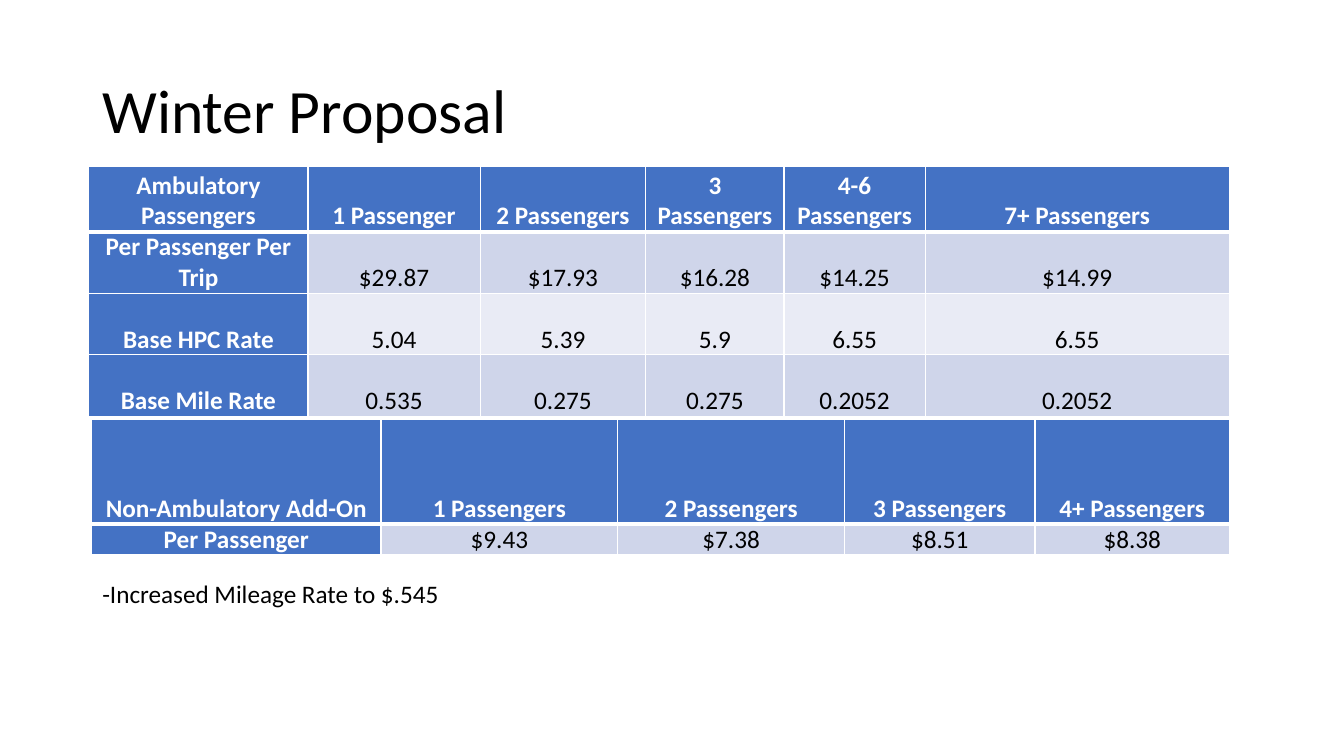
from lxml import etree
from pptx import Presentation
from pptx import util as u
from pptx.dml.color import RGBColor
from pptx.enum import text
from pptx.oxml.ns import qn

FONT = "Calibri"
COLOURS = {
    "text": "000000",
    "header": "4472C4",
    "header text": "FFFFFF",
    "border": "FFFFFF",
    "odd row": "CFD5EA",
    "even row": "E9EBF5",
}
CELL_FORMAT = {
    "margin_left": u.Pt(5),
    "margin_right": u.Pt(5),
    "margin_top": 0,
    "margin_bottom": 0,
    "vertical_anchor": text.MSO_ANCHOR.BOTTOM,
}

AMBULATORY_RATES = [
    ["Ambulatory Passengers", "1 Passenger", "2 Passengers", "3 Passengers",
     "4-6 Passengers", "7+ Passengers"],
    ["Per Passenger Per Trip", "$29.87", "$17.93", "$16.28", "$14.25", "$14.99"],
    ["Base HPC Rate", "5.04", "5.39", "5.9", "6.55", "6.55"],
    ["Base Mile Rate", "0.535", "0.275", "0.275", "0.2052", "0.2052"],
]
ADD_ON_RATES = [
    ["Non-Ambulatory Add-On", "1 Passengers", "2 Passengers", "3 Passengers",
     "4+ Passengers"],
    ["Per Passenger", "$9.43", "$7.38", "$8.51", "$8.38"],
]


def colour(name):
    return RGBColor.from_string(COLOURS[name])


def write(paragraph, words, size, colour_name="text", bold=False):
    run = paragraph.add_run()
    run.text = words
    for name, value in {"name": FONT, "size": u.Pt(size), "bold": bold}.items():
        setattr(run.font, name, value)
    run.font.color.rgb = colour(colour_name)


def add_text(slide, words, left, top, width, height, size,
             anchor=text.MSO_ANCHOR.TOP, line_spacing=None):
    box = slide.shapes.add_textbox(u.Pt(left), u.Pt(top), u.Pt(width), u.Pt(height))
    frame = box.text_frame
    frame.word_wrap = True
    frame.vertical_anchor = anchor
    paragraph = frame.paragraphs[0]
    paragraph.line_spacing = line_spacing
    write(paragraph, words, size)


def add_borders(cell, top, bottom):
    """Draw the four cell edges; top and bottom are widths in points."""
    properties = cell._tc.get_or_add_tcPr()
    for edge, width in {"lnL": 1, "lnR": 1, "lnT": top, "lnB": bottom}.items():
        line = etree.SubElement(properties, qn(f"a:{edge}"), w=str(u.Pt(width)))
        fill = etree.SubElement(line, qn("a:solidFill"))
        etree.SubElement(fill, qn("a:srgbClr"), val=COLOURS["border"])


def format_cell(cell, words, row, column):
    is_header = row == 0 or column == 0
    for name, value in CELL_FORMAT.items():
        setattr(cell, name, value)
    add_borders(cell, top=3 if row == 1 else 1, bottom=3 if row == 0 else 1)
    cell.fill.solid()
    band = "odd row" if row % 2 else "even row"
    cell.fill.fore_color.rgb = colour("header" if is_header else band)
    paragraph = cell.text_frame.paragraphs[0]
    paragraph.alignment = text.PP_ALIGN.CENTER
    write(paragraph, words, 18, "header text" if is_header else "text", is_header)


def add_rate_table(slide, rates, left, top, widths, heights):
    frame = slide.shapes.add_table(
        len(heights), len(widths), u.Pt(left), u.Pt(top),
        u.Pt(sum(widths)), u.Pt(sum(heights)))
    table = frame.table
    for column, width in zip(table.columns, widths):
        column.width = u.Pt(width)
    for row, height in zip(table.rows, heights):
        row.height = u.Pt(height)
    for row, values in enumerate(rates):
        for column, words in enumerate(values):
            format_cell(table.cell(row, column), words, row, column)


def main():
    presentation = Presentation()
    presentation.slide_width = u.Pt(960)
    presentation.slide_height = u.Pt(540)
    slide = presentation.slides.add_slide(presentation.slide_layouts[6])

    add_text(slide, "Winter Proposal", 66, 28.75, 828, 104.4, 44,
             text.MSO_ANCHOR.MIDDLE, 0.9)
    add_rate_table(slide, AMBULATORY_RATES, 63.5, 119,
                   [156.5, 123, 118.3, 98.8, 100.8, 217.2], [46.5, 44, 44, 44])
    add_rate_table(slide, ADD_ON_RATES, 65.5, 299.5,
                   [206.6, 169.2, 162, 136, 139], [75, 21.6])
    add_text(slide, "-Increased Mileage Rate to $.545", 66, 409.7, 812, 29, 18)

    presentation.save("out.pptx")


if __name__ == "__main__":
    main()
